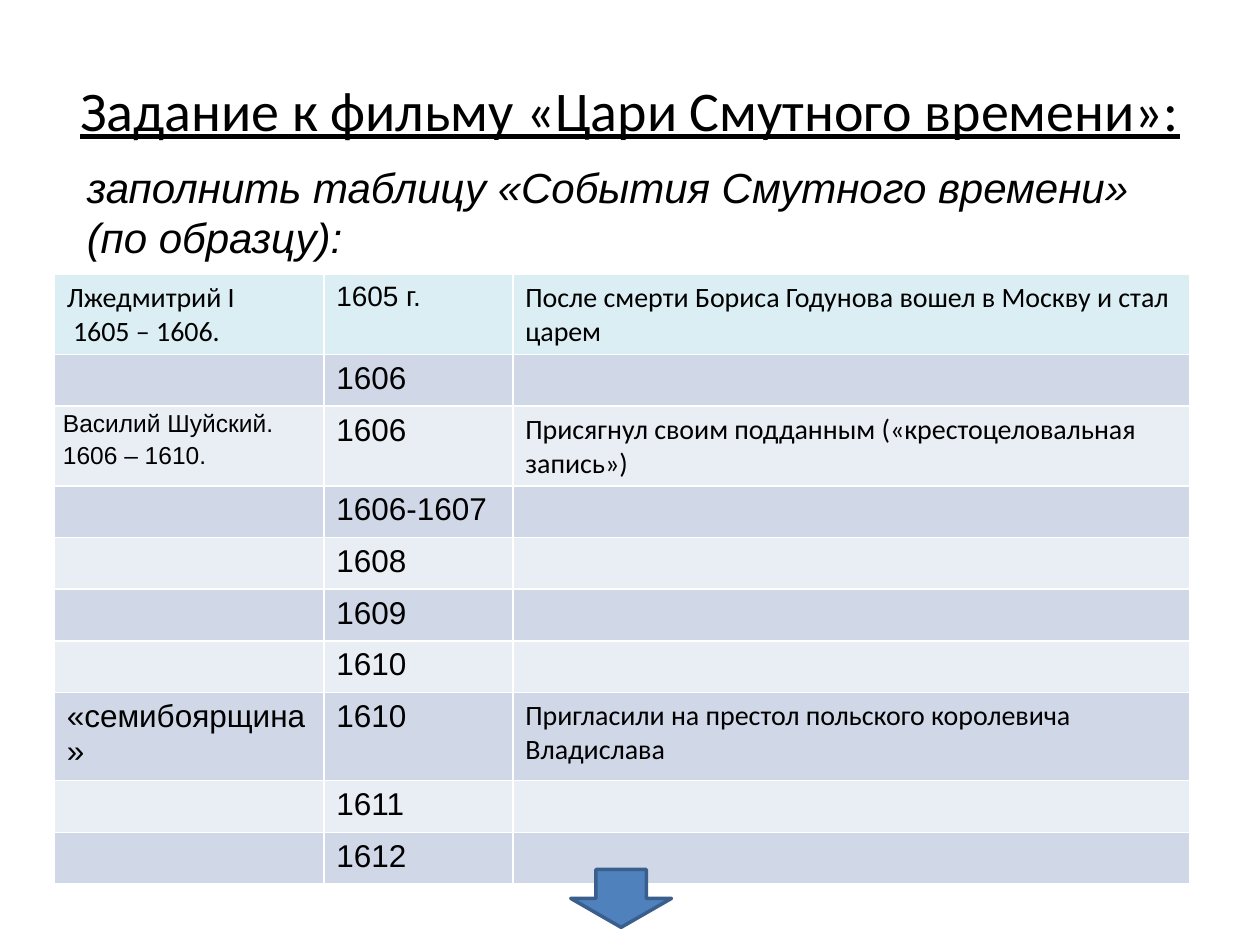
from dataclasses import dataclass

from pptx import Presentation
from pptx.dml.color import RGBColor
from pptx.enum.shapes import MSO_SHAPE
from pptx.enum.text import MSO_ANCHOR, PP_ALIGN
from pptx.slide import Slide
from pptx.table import _Cell
from pptx.text.text import _Paragraph
from pptx.util import Inches, Pt

BLACK = RGBColor(0x00, 0x00, 0x00)
HEADER_FILL = RGBColor(0xDB, 0xEE, 0xF4)
BAND_FILLS = (RGBColor(0xE9, 0xED, 0xF4), RGBColor(0xD0, 0xD8, 0xE8))
ARROW_FILL = RGBColor(0x4F, 0x81, 0xBD)
ARROW_LINE = RGBColor(0x3A, 0x5F, 0x8C)

COLUMN_WIDTHS = (2.14, 1.5, 5.37)
ROW_HEIGHT = 0.41


@dataclass(frozen=True)
class Entry:
    text: str = ""
    size: int = 18
    font: str = "Arial"
    compact: bool = False


def note(text: str) -> Entry:
    return Entry(text, 16, "Calibri")


EVENTS = (
    (note("Лжедмитрий I\n 1605 – 1606."), Entry("1605 г.", 16),
     note("После смерти Бориса Годунова вошел в Москву и стал царем")),
    (Entry(), Entry("1606"), Entry()),
    (Entry("Василий Шуйский.\n1606 – 1610.", 14, compact=True), Entry("1606"),
     note("Присягнул своим подданным («крестоцеловальная запись»)")),
    (Entry(), Entry("1606-1607"), Entry()),
    (Entry(), Entry("1608"), Entry()),
    (Entry(), Entry("1609"), Entry()),
    (Entry(), Entry("1610"), Entry()),
    (Entry("«семибоярщина»"), Entry("1610"),
     note("Пригласили на престол польского королевича Владислава")),
    (Entry(), Entry("1611"), Entry()),
    (Entry(), Entry("1612"), Entry()),
)


def style_paragraph(para: _Paragraph, font: str, size: int) -> None:
    para.font.name = font
    para.font.size = Pt(size)
    para.font.color.rgb = BLACK
    para.font.bold = False


def add_title(page: Slide) -> None:
    box = page.shapes.add_textbox(Inches(0.5), Inches(0.3), Inches(9), Inches(0.93))
    frame = box.text_frame
    frame.word_wrap = True
    frame.vertical_anchor = MSO_ANCHOR.BOTTOM
    frame.margin_bottom = Inches(0.1)
    frame.text = "Задание к фильму «Цари Смутного времени»:"
    para = frame.paragraphs[0]
    para.alignment = PP_ALIGN.CENTER
    style_paragraph(para, "Calibri", 32)
    para.font.underline = True


def add_instruction(page: Slide) -> None:
    box = page.shapes.add_textbox(Inches(0.59), Inches(1.23), Inches(8.58), Inches(0.91))
    box.text_frame.word_wrap = True
    box.text_frame.text = "заполнить таблицу «События Смутного времени» (по образцу):"
    para = box.text_frame.paragraphs[0]
    style_paragraph(para, "Arial", 24)
    para.font.italic = True


def fill_cell(cell: _Cell, entry: Entry, color: RGBColor) -> None:
    cell.fill.solid()
    cell.fill.fore_color.rgb = color
    cell.text = entry.text
    if entry.compact:
        cell.margin_left = cell.margin_right = Inches(0.07)
        cell.margin_top = cell.margin_bottom = Inches(0)
    for para in cell.text_frame.paragraphs:
        style_paragraph(para, entry.font, entry.size)
        if entry.compact:
            para.line_spacing = 1.15


def add_events_table(page: Slide) -> None:
    table = page.shapes.add_table(
        len(EVENTS), len(COLUMN_WIDTHS), Inches(0.43), Inches(2.18),
        Inches(sum(COLUMN_WIDTHS)), Inches(ROW_HEIGHT * len(EVENTS)),
    ).table
    for column, width in zip(table.columns, COLUMN_WIDTHS):
        column.width = Inches(width)
    for index, (row, entries) in enumerate(zip(table.rows, EVENTS)):
        row.height = Inches(ROW_HEIGHT)
        color = BAND_FILLS[index % 2] if index else HEADER_FILL
        for cell, entry in zip(row.cells, entries):
            fill_cell(cell, entry, color)


def add_down_arrow(page: Slide) -> None:
    arrow = page.shapes.add_shape(
        MSO_SHAPE.LEFT_ARROW, Inches(4.7), Inches(6.73), Inches(0.46), Inches(0.8))
    arrow.rotation = 270
    arrow.shadow.inherit = False
    arrow.fill.solid()
    arrow.fill.fore_color.rgb = ARROW_FILL
    arrow.line.color.rgb = ARROW_LINE
    arrow.line.width = Pt(2)


def main() -> None:
    """Build the Time of Troubles worksheet slide."""
    deck = Presentation()
    deck.slide_width, deck.slide_height = Inches(10), Inches(7.5)
    page = deck.slides.add_slide(deck.slide_layouts[6])
    add_title(page)
    add_events_table(page)
    add_instruction(page)
    add_down_arrow(page)
    deck.save("out.pptx")


if __name__ == "__main__":
    main()
